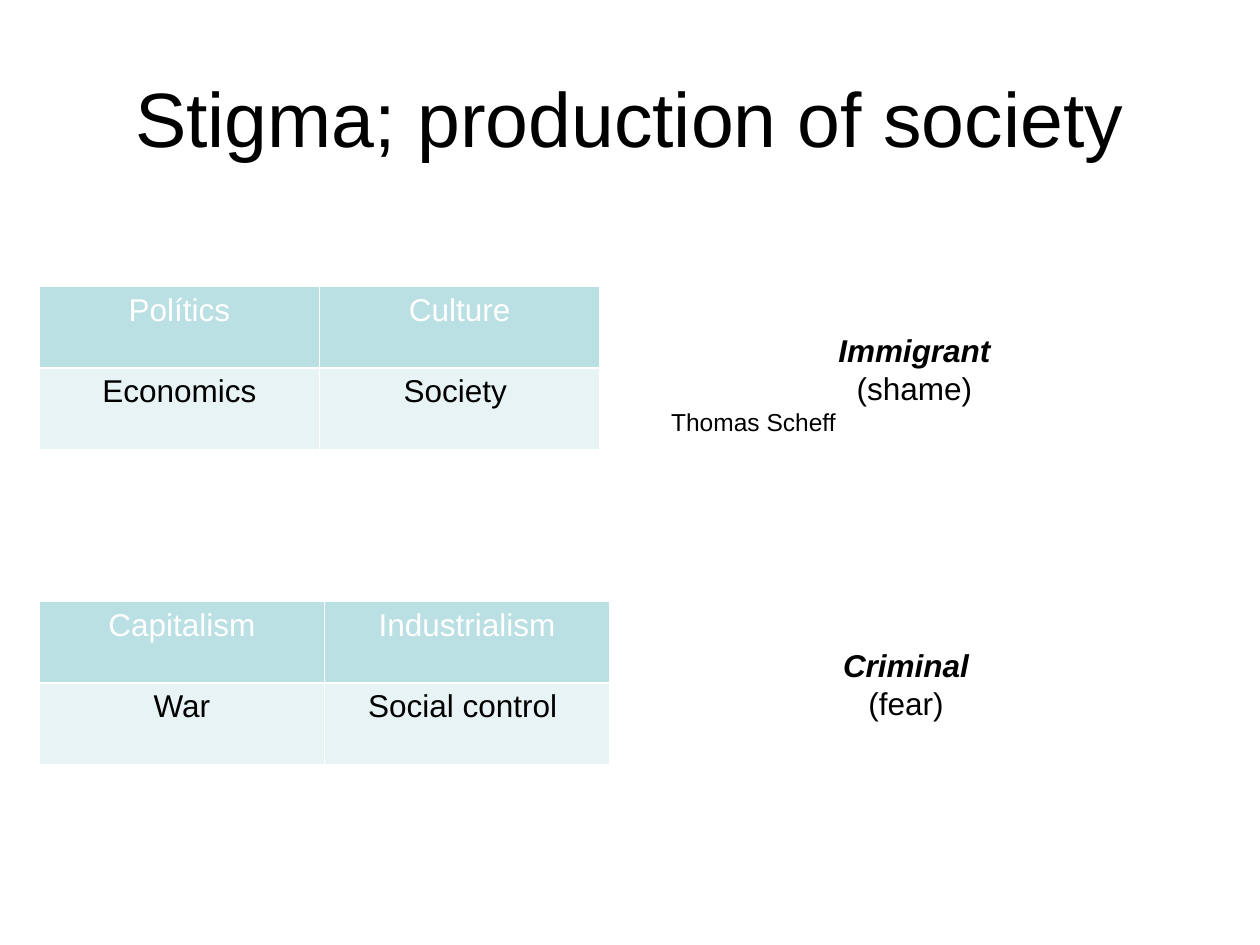
from lxml import etree
from pptx import Presentation
from pptx.dml.color import RGBColor
from pptx.enum.text import MSO_ANCHOR, PP_ALIGN
from pptx.oxml.ns import qn
from pptx.util import Cm, Pt

LEFT, CENTER = PP_ALIGN.LEFT, PP_ALIGN.CENTER
TOP, MIDDLE = MSO_ANCHOR.TOP, MSO_ANCHOR.MIDDLE
BLACK = RGBColor(0x00, 0x00, 0x00)
WHITE = RGBColor(0xFF, 0xFF, 0xFF)
TEAL = RGBColor(0xBB, 0xE0, 0xE3)
PALE_TEAL = RGBColor(0xE7, 0xF3, 0xF4)

TABLE_LEFT, ROW_HEIGHT = 0.79, 1.65
NOTE_WIDTH = 10.31


class SlideBuilder:
    font_name = "Arial"
    body_size = 18

    def __init__(self, page):
        self.page = page

    def style(self, para, size=body_size, color=BLACK, align=CENTER, strong=False):
        para.alignment = align
        font = para.font
        font.name, font.size, font.color.rgb = self.font_name, Pt(size), color
        font.bold = font.italic = strong

    def text(self, left, top, width, height, lines, anchor=TOP):
        """Add a text box; each line is (text, style options)."""
        box = self.page.shapes.add_textbox(Cm(left), Cm(top), Cm(width), Cm(height))
        frame = box.text_frame
        frame.word_wrap = True
        frame.vertical_anchor = anchor
        for index, (words, options) in enumerate(lines):
            para = frame.add_paragraph() if index else frame.paragraphs[0]
            para.text = words
            self.style(para, **options)

    def border(self, cell):
        properties = cell._tc.get_or_add_tcPr()
        for side in ("a:lnL", "a:lnR", "a:lnT", "a:lnB"):
            line = etree.SubElement(properties, qn(side), w=str(Pt(1)))
            fill = etree.SubElement(line, qn("a:solidFill"))
            etree.SubElement(fill, qn("a:srgbClr"), val=str(WHITE))

    def table(self, left, top, width, rows):
        count = len(rows[0])
        table = self.page.shapes.add_table(
            len(rows), count, Cm(left), Cm(top),
            Cm(width), Cm(ROW_HEIGHT * len(rows))).table
        for column in table.columns:
            column.width = Cm(width / count)
        for row_index, row in enumerate(rows):
            background, color = (PALE_TEAL, BLACK) if row_index else (TEAL, WHITE)
            for column_index, words in enumerate(row):
                cell = table.cell(row_index, column_index)
                cell.text = words
                self.style(cell.text_frame.paragraphs[0], color=color)
                self.border(cell)
                cell.fill.solid()
                cell.fill.fore_color.rgb = background


def main():
    deck = Presentation()
    deck.slide_width, deck.slide_height = Cm(25.4), Cm(19.05)
    builder = SlideBuilder(deck.slides.add_slide(deck.slide_layouts[6]))

    builder.text(1.27, 0.76, 22.86, 3.18,
                 [("Stigma; production of society", {"size": 44})], MIDDLE)

    builder.table(TABLE_LEFT, 5.77, 11.3,
                  [("Polítics", "Culture"), ("Economics", "Society ")])
    builder.text(13.28, 6.55, NOTE_WIDTH, 2.39,
                 [("Immigrant", {"strong": True}),
                  ("(shame)", {}),
                  ("Thomas Scheff", {"size": 14, "align": LEFT})])

    builder.table(TABLE_LEFT, 12.12, 11.5,
                  [("Capitalism", "Industrialism"), ("War", "Social control ")])
    builder.text(13.11, 12.9, NOTE_WIDTH, 1.8,
                 [("Criminal", {"strong": True}), ("(fear)", {})])

    deck.save("out.pptx")


if __name__ == "__main__":
    main()
